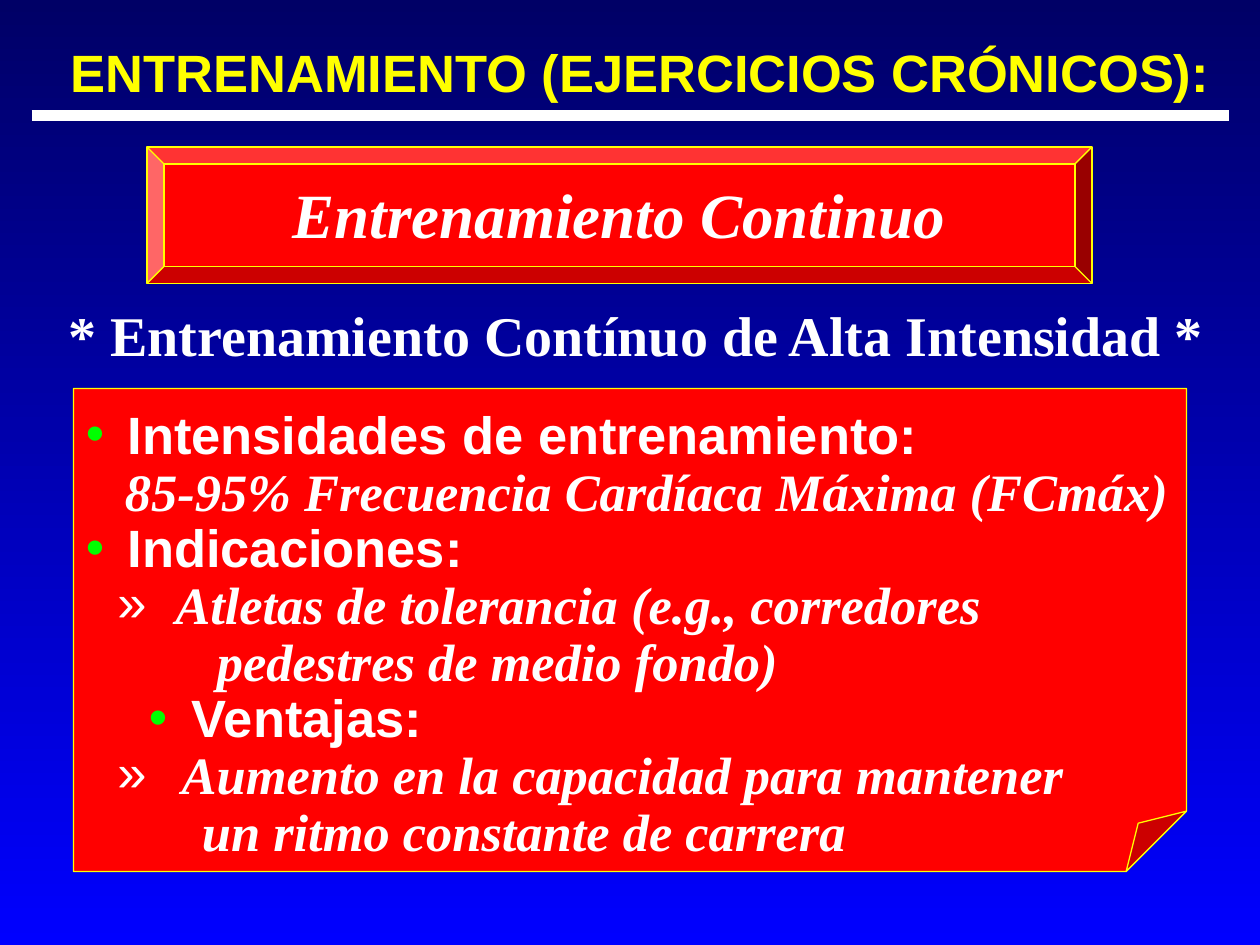
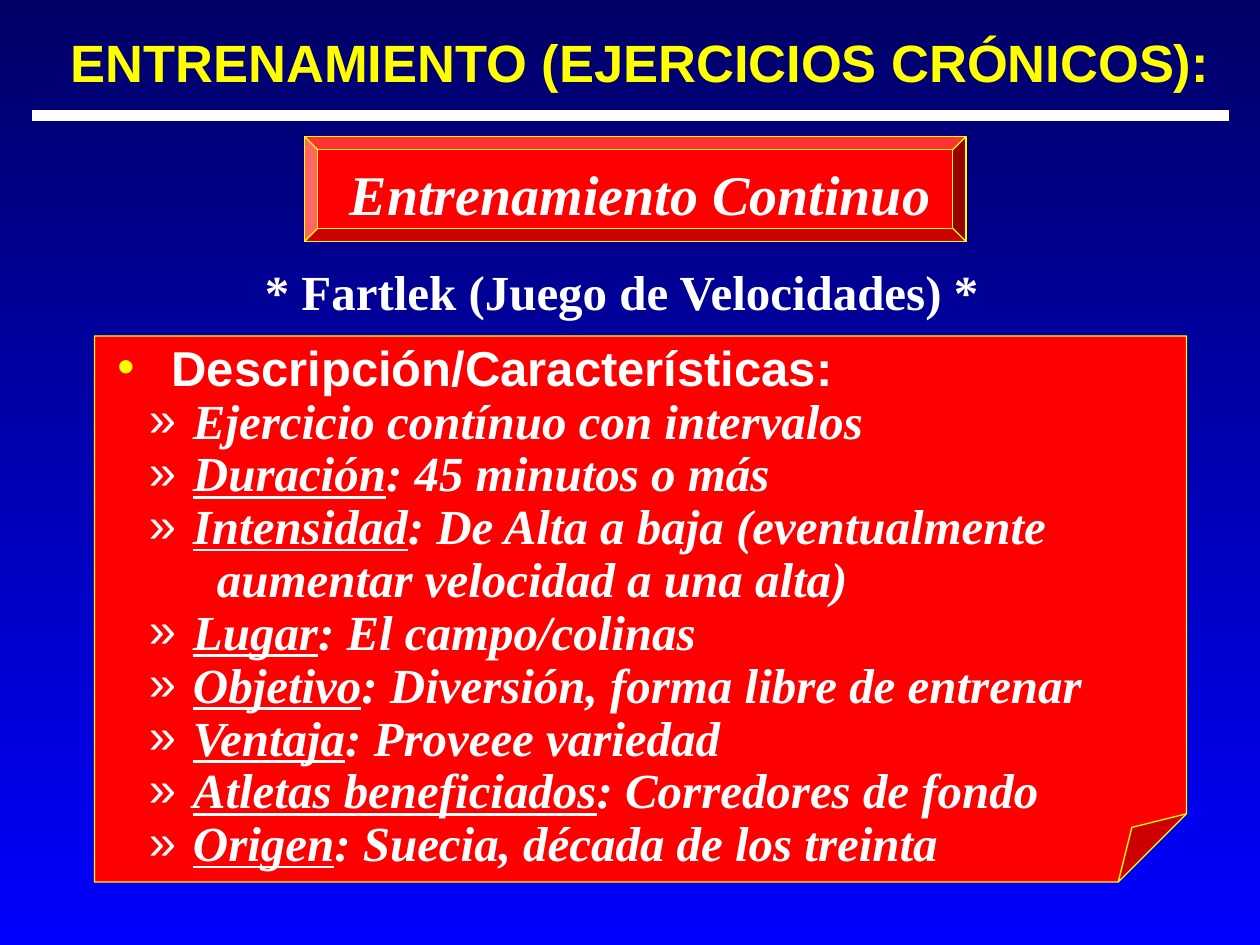
from lxml import etree
from pptx import Presentation
from pptx.dml.color import RGBColor
from pptx.enum.shapes import MSO_CONNECTOR, MSO_SHAPE
from pptx.enum.text import MSO_ANCHOR, PP_ALIGN
from pptx.oxml.ns import qn
from pptx.util import Inches, Pt

NAVY = RGBColor(0x00, 0x00, 0x66)
BLUE = RGBColor(0x00, 0x00, 0xFF)
RED = RGBColor(0xFF, 0x00, 0x00)
YELLOW = RGBColor(0xFF, 0xFF, 0x00)
GREEN = RGBColor(0x00, 0xFF, 0x00)
WHITE = RGBColor(0xFF, 0xFF, 0xFF)

SANS, SERIF = "Arial", "Times New Roman"
BEVEL, NOTE = MSO_SHAPE.BEVEL, MSO_SHAPE.FOLDED_CORNER
STRAIGHT = MSO_CONNECTOR.STRAIGHT
CENTER, MIDDLE, TOP = PP_ALIGN.CENTER, MSO_ANCHOR.MIDDLE, MSO_ANCHOR.TOP

# The page is a grid of 120 columns by 90 rows
PAGE_WIDTH, PAGE_HEIGHT = Inches(10), Inches(7.5)
COLUMN, ROW = PAGE_WIDTH / 120, PAGE_HEIGHT / 90
LINE_PITCH = 1.08  # line height as a multiple of the text size

TITLE = "ENTRENAMIENTO (EJERCICIOS CRÓNICOS):"
BANNER = "Entrenamiento Continuo"


def on_grid(left, top, width, height):
    return (round(left * COLUMN), round(top * ROW),
            round(width * COLUMN), round(height * ROW))


def add_span(para, text, size, font, color, italic=False, underline=False):
    span = para.add_run()
    span.text = text
    style = span.font
    style.size, style.name, style.bold = Pt(size), font, True
    style.italic, style.underline = italic, underline
    style.color.rgb = color
    return span


def add_shadow(span):
    fill = span.font._element.find(qn("a:solidFill"))
    effects = etree.Element(qn("a:effectLst"))
    shadow = etree.SubElement(effects, qn("a:outerShdw"),
                              dist="38100", dir="2700000", algn="tl")
    etree.SubElement(shadow, qn("a:srgbClr"), val="808080")
    fill.addnext(effects)


def set_bullet(para, char, color):
    properties = para._p.get_or_add_pPr()
    tint = etree.SubElement(properties, qn("a:buClr"))
    etree.SubElement(tint, qn("a:srgbClr"), val=str(color))
    etree.SubElement(properties, qn("a:buFont"), typeface=SANS)
    etree.SubElement(properties, qn("a:buChar"), char=char)


def add_text_box(page, box, anchor):
    frame = page.shapes.add_textbox(*on_grid(*box)).text_frame
    frame.word_wrap = True
    frame.vertical_anchor = anchor
    return frame


def add_caption(page, middle, text, size, font, color, italic=False):
    """One line of text centred on the grid point `middle`."""
    column, row = middle
    width, height = 114, 8
    frame = add_text_box(page, (column - width / 2, row - height / 2, width, height), MIDDLE)
    para = frame.paragraphs[0]
    para.alignment = CENTER
    return add_span(para, text, size, font, color, italic)


def add_panel(page, kind, box):
    panel = page.shapes.add_shape(kind, *on_grid(*box))
    panel.shadow.inherit = False
    panel.fill.solid()
    panel.fill.fore_color.rgb = RED
    panel.line.color.rgb = YELLOW
    panel.line.width = Pt(0.75)
    # Bevel depth or fold size: an eighth of the shorter side
    guides = panel._element.spPr.find(qn("a:prstGeom")).get_or_add_avLst()
    for guide in list(guides):
        guides.remove(guide)
    etree.SubElement(guides, qn("a:gd"), name="adj", fmla="val 12500")


def add_header(page, title_row):
    """Background, title and the rule below it."""
    fill = page.background.fill
    fill.gradient()
    fill.gradient_angle = 270
    for stop, color in zip(fill.gradient_stops, (NAVY, BLUE)):
        stop.color.rgb = color
    add_caption(page, (61, title_row), TITLE, 30, SANS, YELLOW)
    left, row, width, _ = on_grid(3, 11, 114, 0)
    rule = page.shapes.add_connector(STRAIGHT, left, row, left + width, row)
    rule.line.color.rgb = WHITE
    rule.line.width = Pt(6)
    etree.SubElement(rule._element.spPr, qn("a:effectLst"))


def add_banner(page, box, shift, size):
    """Bevelled plate; its text sits `shift` away from the plate's centre."""
    add_panel(page, BEVEL, box)
    left, top, width, height = box
    middle = (left + width / 2 + shift[0], top + height / 2 + shift[1])
    add_shadow(add_caption(page, middle, BANNER, size, SERIF, WHITE, italic=True))


def add_note(page, box, shift, size, bullet_color, lines):
    """Folded sheet with lines of (kind, bullet inch, text inch, label, text)."""
    add_panel(page, NOTE, box)
    left, top, width, height = box
    frame = add_text_box(page, (left + shift[0], top + shift[1],
                                width - shift[0], height - shift[1]), TOP)
    for number, (kind, bullet_at, text_at, label, text) in enumerate(lines):
        para = frame.add_paragraph() if number else frame.paragraphs[0]
        para.line_spacing = Pt(round(size * LINE_PITCH, 1))
        properties = para._p.get_or_add_pPr()
        properties.set("marL", str(Inches(text_at)))
        properties.set("indent", str(Inches(bullet_at - text_at)))
        if kind == "head":
            set_bullet(para, "•", bullet_color)
            add_span(para, text, size, SANS, WHITE)
            continue
        if kind == "item":
            set_bullet(para, "»", WHITE)
        if label:
            add_span(para, label, size, SERIF, WHITE, italic=True, underline=True)
        add_span(para, text, size, SERIF, WHITE, italic=True)


def head(text, text_at, bullet_at=0):
    return "head", bullet_at, text_at, "", text


def item(text, text_at, label=""):
    return "item", 0.25, text_at, label, text


def plain(text, text_at):
    return "plain", text_at, text_at, "", text


def build_high_intensity(page):
    add_header(page, title_row=6.8)
    add_banner(page, (14, 14, 90, 13), (0, -0.2), 36)
    add_caption(page, (60.6, 31.8), "* Entrenamiento Contínuo de Alta Intensidad *",
                32, SERIF, WHITE)
    add_note(page, (7, 37, 106, 46), (0, 1.3), 30, GREEN, [
        head("Intensidades de entrenamiento:", 0.33),
        plain("85-95% Frecuencia Cardíaca Máxima (FCmáx)", 0.31),
        head("Indicaciones:", 0.33),
        item("Atletas de tolerancia (e.g., corredores", 0.71),
        plain("pedestres de medio fondo)", 1.04),
        head("Ventajas:", 0.84, bullet_at=0.5),
        item("Aumento en la capacidad para mantener", 0.76),
        plain("un ritmo constante de carrera", 0.92),
    ])


def build_fartlek(page):
    add_header(page, title_row=5.9)
    add_banner(page, (29, 13, 63, 10), (0.5, 0.4), 32)
    add_caption(page, (59.2, 27.7), "* Fartlek (Juego de Velocidades) *", 28, SERIF, WHITE)
    indent = 0.6
    add_note(page, (9, 32, 104, 52), (1, 0.1), 28, YELLOW, [
        head("Descripción/Características:", 0.43),
        item("Ejercicio contínuo con intervalos", indent),
        item(": 45 minutos o más", indent, "Duración"),
        item(": De Alta a baja (eventualmente", indent, "Intensidad"),
        plain("aumentar velocidad a una alta)", 0.79),
        item(": El campo/colinas", indent, "Lugar"),
        item(": Diversión, forma libre de entrenar", indent, "Objetivo"),
        item(": Proveee variedad", indent, "Ventaja"),
        item(": Corredores de fondo", indent, "Atletas beneficiados"),
        item(": Suecia, década de los treinta", indent, "Origen"),
    ])


def main():
    deck = Presentation()
    deck.slide_width, deck.slide_height = PAGE_WIDTH, PAGE_HEIGHT
    blank = deck.slide_layouts[6]
    for build in (build_high_intensity, build_fartlek):
        build(deck.slides.add_slide(blank))
    deck.save("out.pptx")


if __name__ == "__main__":
    main()
